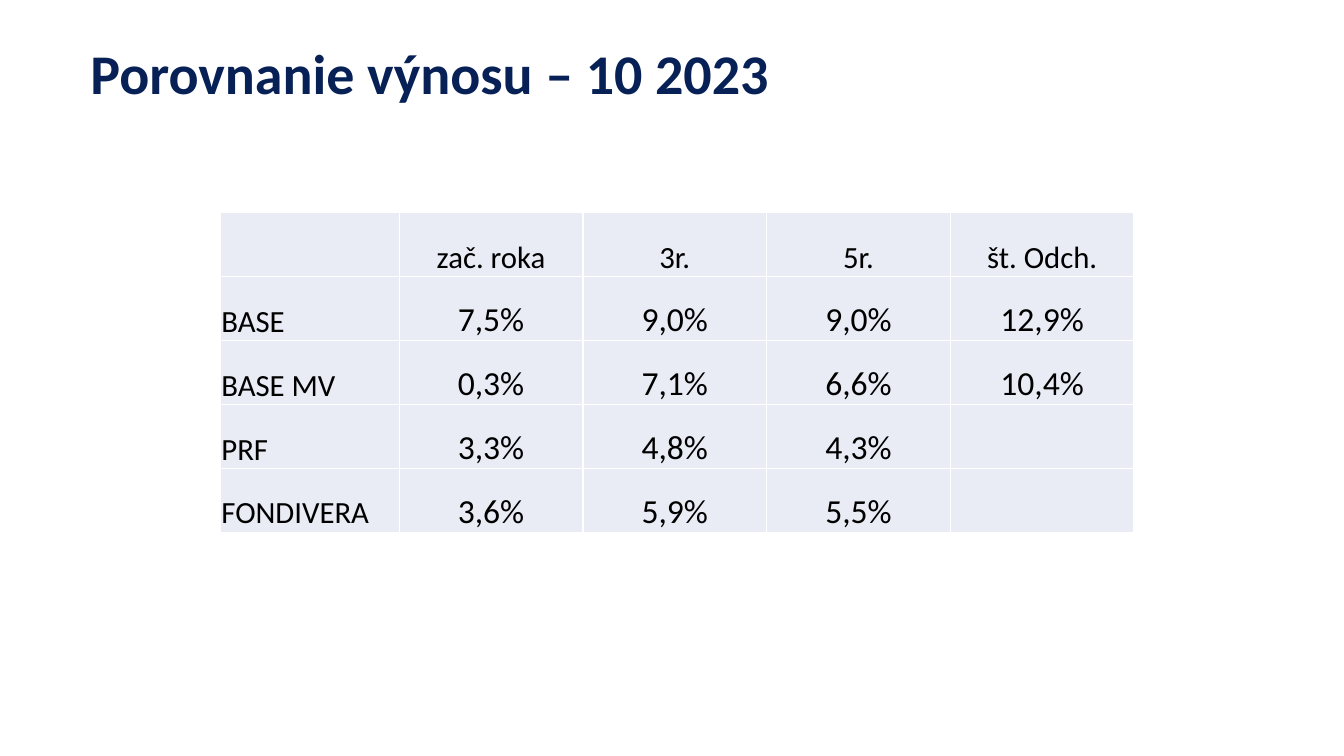
import dataclasses

import lxml.etree
import pptx
import pptx.dml.color
import pptx.enum.text
import pptx.oxml.ns
import pptx.util

Cm = pptx.util.Cm
Pt = pptx.util.Pt
Alignment = pptx.enum.text.PP_ALIGN
Anchor = pptx.enum.text.MSO_ANCHOR

COLORS = {"title": "072156", "text": "000000", "cell": "E9EBF5", "border": "FFFFFF"}
LABEL_SIZE = 22
VALUE_SIZE = 24
FIRST_COLUMN_WIDTH = 4.5
COLUMN_WIDTH = 4.63
ROW_HEIGHT = 1.61
CELL_FORMAT = {
    "vertical_anchor": Anchor.BOTTOM,
    "margin_left": Cm(0.02),
    "margin_right": Cm(0.02),
    "margin_top": Cm(0.02),
    "margin_bottom": Cm(0),
}
TITLE_FRAME_FORMAT = {"word_wrap": True, "vertical_anchor": Anchor.TOP}


@dataclasses.dataclass
class FundReturns:
    name: str
    values: tuple[str, ...]


HEADINGS = ("", "zač. roka", "3r.", "5r.", "št. Odch.")
FUNDS = (
    FundReturns("BASE", ("7,5%", "9,0%", "9,0%", "12,9%")),
    FundReturns("BASE MV", ("0,3%", "7,1%", "6,6%", "10,4%")),
    FundReturns("PRF", ("3,3%", "4,8%", "4,3%", "")),
    FundReturns("FONDIVERA", ("3,6%", "5,9%", "5,5%", "")),
)


def apply_format(target: object, values: dict) -> None:
    for name, value in values.items():
        setattr(target, name, value)


def write_text(paragraph, text: str, size: int, color: str, bold: bool, alignment) -> None:
    paragraph.alignment = alignment
    run = paragraph.add_run()
    run.text = text
    apply_format(run.font, {"name": "Calibri", "size": Pt(size), "bold": bold})
    run.font.color.rgb = pptx.dml.color.RGBColor.from_string(COLORS[color])


def add_borders(cell) -> None:
    properties = cell._tc.get_or_add_tcPr()
    qn = pptx.oxml.ns.qn
    for position, side in enumerate(("lnL", "lnR", "lnT", "lnB")):
        line = lxml.etree.Element(qn(f"a:{side}"), w=str(Pt(1)))
        fill = lxml.etree.SubElement(line, qn("a:solidFill"))
        lxml.etree.SubElement(fill, qn("a:srgbClr"), val=COLORS["border"])
        properties.insert(position, line)


def add_title(slide) -> None:
    title = slide.shapes.add_textbox(Cm(2.03), Cm(1.04), Cm(29.21), Cm(2.79))
    apply_format(title.text_frame, TITLE_FRAME_FORMAT)
    paragraph = title.text_frame.paragraphs[0]
    paragraph.line_spacing = 0.9
    write_text(paragraph, "Porovnanie výnosu – 10 2023", 40, "title", True, Alignment.LEFT)


def fill_cell(cell, text: str, row: int, column: int) -> None:
    cell.fill.solid()
    cell.fill.fore_color.rgb = pptx.dml.color.RGBColor.from_string(COLORS["cell"])
    apply_format(cell, CELL_FORMAT)
    add_borders(cell)
    if text:
        size = VALUE_SIZE if row and column else LABEL_SIZE
        alignment = Alignment.CENTER if column else Alignment.LEFT
        write_text(cell.text_frame.paragraphs[0], text, size, "text", False, alignment)


def add_returns_table(slide) -> None:
    rows = [HEADINGS, *((fund.name, *fund.values) for fund in FUNDS)]
    widths = [FIRST_COLUMN_WIDTH] + [COLUMN_WIDTH] * (len(HEADINGS) - 1)
    shape = slide.shapes.add_table(
        len(rows), len(widths), Cm(5.56), Cm(5.36),
        Cm(sum(widths)), Cm(ROW_HEIGHT * len(rows)),
    )
    table = shape.table
    apply_format(table, {"first_row": False, "horz_banding": False})
    for column, width in zip(table.columns, widths):
        column.width = Cm(width)
    for row_index, texts in enumerate(rows):
        table.rows[row_index].height = Cm(ROW_HEIGHT)
        for column_index, text in enumerate(texts):
            fill_cell(table.cell(row_index, column_index), text, row_index, column_index)


def main() -> None:
    presentation = pptx.Presentation()
    apply_format(presentation, {"slide_width": Cm(33.87), "slide_height": Cm(19.05)})
    slide = presentation.slides.add_slide(presentation.slide_layouts[6])
    add_title(slide)
    add_returns_table(slide)
    presentation.save("out.pptx")


if __name__ == "__main__":
    main()
